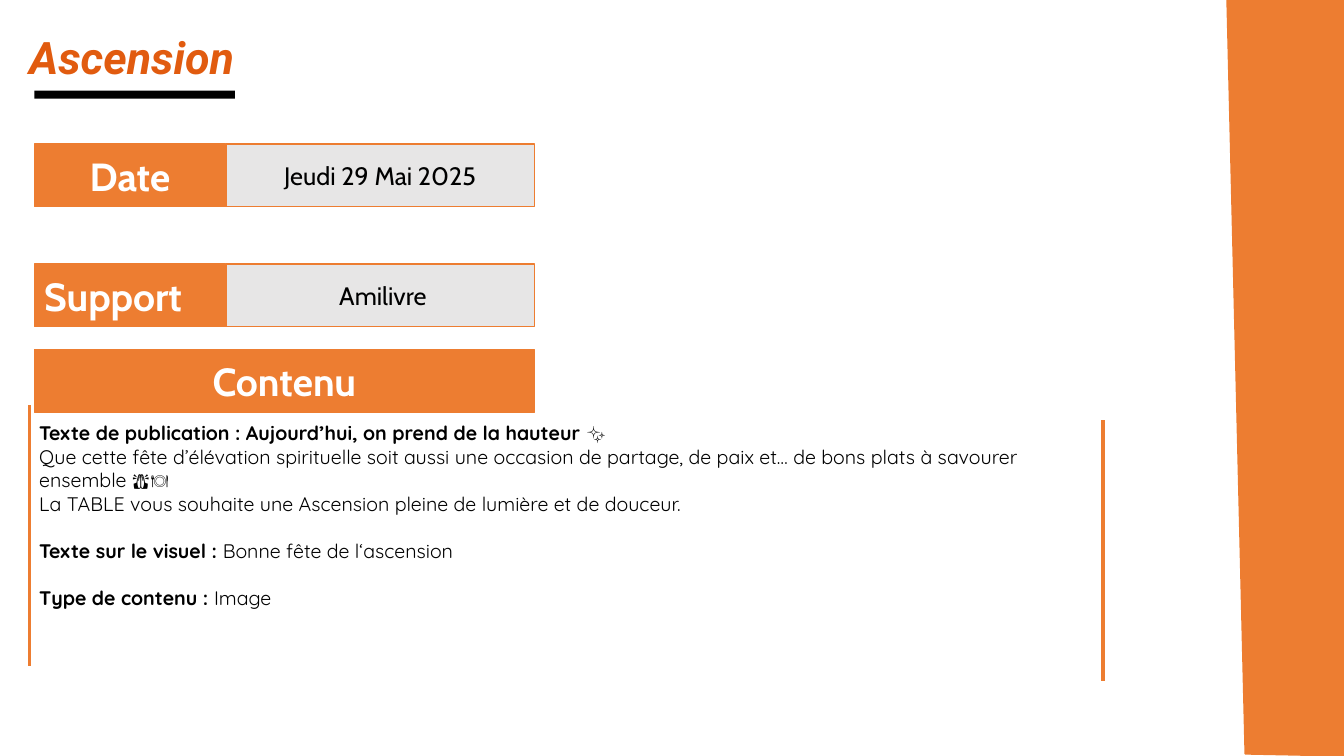
"""Build the Ascension publication slide."""
from dataclasses import dataclass, field

from pptx import Presentation
from pptx.dml.color import RGBColor
from pptx.enum.shapes import MSO_CONNECTOR, MSO_SHAPE
from pptx.enum.text import MSO_ANCHOR, PP_ALIGN as Align
from pptx.oxml import parse_xml
from pptx.oxml.ns import nsdecls
from pptx.util import Inches, Pt

ORANGE = RGBColor(0xED, 0x7D, 0x31)
TITLE_ORANGE = RGBColor(0xE1, 0x5B, 0x0F)
GREY = RGBColor(0xE7, 0xE6, 0xE6)
BLACK = RGBColor(0, 0, 0)
WHITE = RGBColor(0xFF, 0xFF, 0xFF)

LABEL = {"name": "Cabin", "size": Pt(28), "bold": True}
VALUE = {"name": "Cabin", "size": Pt(18)}
TITLE = {"name": "Roboto", "size": Pt(32), "bold": True, "italic": True}
BODY = {"name": "Quicksand", "size": Pt(14), "bold": False}
STRONG = BODY | {"bold": True}

LEFT, LABEL_W, VALUE_W, ROW_H = 0.34, 1.9, 3.06, 0.62


@dataclass
class Box:
    text: str
    x: float
    y: float
    w: float
    fill: RGBColor = ORANGE
    color: RGBColor = WHITE
    font: dict = field(default_factory=lambda: LABEL)
    align: Align = Align.CENTER


@dataclass
class Rule:
    x: float
    top: float
    bottom: float


@dataclass
class Para:
    lead: str
    rest: str
    align: Align = Align.JUSTIFY
    before: float = 16.8


def value_box(text: str, y: float) -> Box:
    """Return the grey box that stands right of a label."""
    return Box(text, LEFT + LABEL_W, y, VALUE_W, GREY, BLACK, VALUE)


BOXES = [
    Box("Date", LEFT, 1.43, LABEL_W),
    value_box("Jeudi 29 Mai 2025", 1.43),
    Box("Support", LEFT, 2.62, LABEL_W, align=Align.LEFT),
    value_box(" Amilivre", 2.62),
    Box("Contenu", LEFT, 3.47, LABEL_W + VALUE_W),
]
RULES = [Rule(0.29, 4.02, 6.61), Rule(10.94, 4.17, 6.76)]
PARAS = [
    Para("Texte de publication : Aujourd’hui, on prend de la hauteur ✨\v",
         "Que cette fête d’élévation spirituelle soit aussi une occasion de partage, "
         "de paix et… de bons plats à savourer ensemble 🙏🍽️\v"
         "La TABLE vous souhaite une Ascension pleine de lumière et de douceur.",
         Align.LEFT, 0),
    Para("Texte sur le visuel : ", "Bonne fête de l‘ascension"),
    Para("Type de contenu : ", "Image"),
]


def add_text(p, text: str, font: dict, color: RGBColor) -> None:
    """Append text to a paragraph, with line breaks at vertical tabs."""
    for i, line in enumerate(text.split("\v")):
        if i:
            p.add_line_break()
        if line:
            r = p.add_run()
            r.text = line
            for name, value in font.items():
                setattr(r.font, name, value)
            r.font.color.rgb = color


def paint(sp, fill: RGBColor, outlined: bool = True) -> None:
    """Fill a shape and give it an orange outline or none."""
    sp.shadow.inherit = False
    sp.fill.solid()
    sp.fill.fore_color.rgb = fill
    if outlined:
        sp.line.color.rgb = ORANGE
        sp.line.width = Pt(1)
    else:
        sp.line.fill.background()


def add_box(s, box: Box) -> None:
    """Draw a label or value box."""
    sp = s.shapes.add_shape(MSO_SHAPE.RECTANGLE, Inches(box.x), Inches(box.y),
                            Inches(box.w), Inches(ROW_H))
    paint(sp, box.fill)
    tf = sp.text_frame
    tf.vertical_anchor = MSO_ANCHOR.MIDDLE
    p = tf.paragraphs[0]
    p.alignment = box.align
    add_text(p, box.text, box.font, box.color)


def add_rule(s, rule: Rule) -> None:
    """Draw a vertical orange rule."""
    x = Inches(rule.x)
    ln = s.shapes.add_connector(MSO_CONNECTOR.STRAIGHT, x, Inches(rule.top),
                                x, Inches(rule.bottom))
    ln.line.color.rgb = ORANGE
    ln.line.width = Pt(2.25)
    ln._element.spPr.append(parse_xml(f"<a:effectLst {nsdecls('a')}/>"))


def add_frame(s, x: float, y: float, w: float, h: float):
    """Add a wrapping text box and return its text frame."""
    tf = s.shapes.add_textbox(Inches(x), Inches(y), Inches(w), Inches(h)).text_frame
    tf.word_wrap = True
    return tf


def add_band(s) -> None:
    """Draw the slanted band on the right edge."""
    fb = s.shapes.build_freeform(Inches(12.17), 0)
    corners = [(13.33, 0), (13.34, 7.5), (12.35, 7.48)]
    fb.add_line_segments([(Inches(x), Inches(y)) for x, y in corners], close=True)
    paint(fb.convert_to_shape(), ORANGE)


def main() -> None:
    """Build and save the slide."""
    prs = Presentation()
    prs.slide_width, prs.slide_height = Inches(13.33), Inches(7.5)
    s = prs.slides.add_slide(prs.slide_layouts[6])

    add_band(s)
    underline = s.shapes.add_shape(MSO_SHAPE.RECTANGLE, Inches(LEFT), Inches(0.9),
                                   Inches(1.99), Inches(0.08))
    paint(underline, BLACK, outlined=False)
    for box in BOXES:
        add_box(s, box)
    for rule in RULES:
        add_rule(s, rule)

    tf = add_frame(s, 0.29, 4.13, 10.82, 2.19)
    for i, para in enumerate(PARAS):
        p = tf.add_paragraph() if i else tf.paragraphs[0]
        p.alignment = para.align
        p.space_before = Pt(para.before)
        add_text(p, para.lead, STRONG, BLACK)
        add_text(p, para.rest, BODY, BLACK)

    p = add_frame(s, 0.19, 0.25, 11.03, 0.52).paragraphs[0]
    p.alignment = Align.JUSTIFY
    add_text(p, "Ascension", TITLE, TITLE_ORANGE)

    prs.save("out.pptx")


if __name__ == "__main__":
    main()
